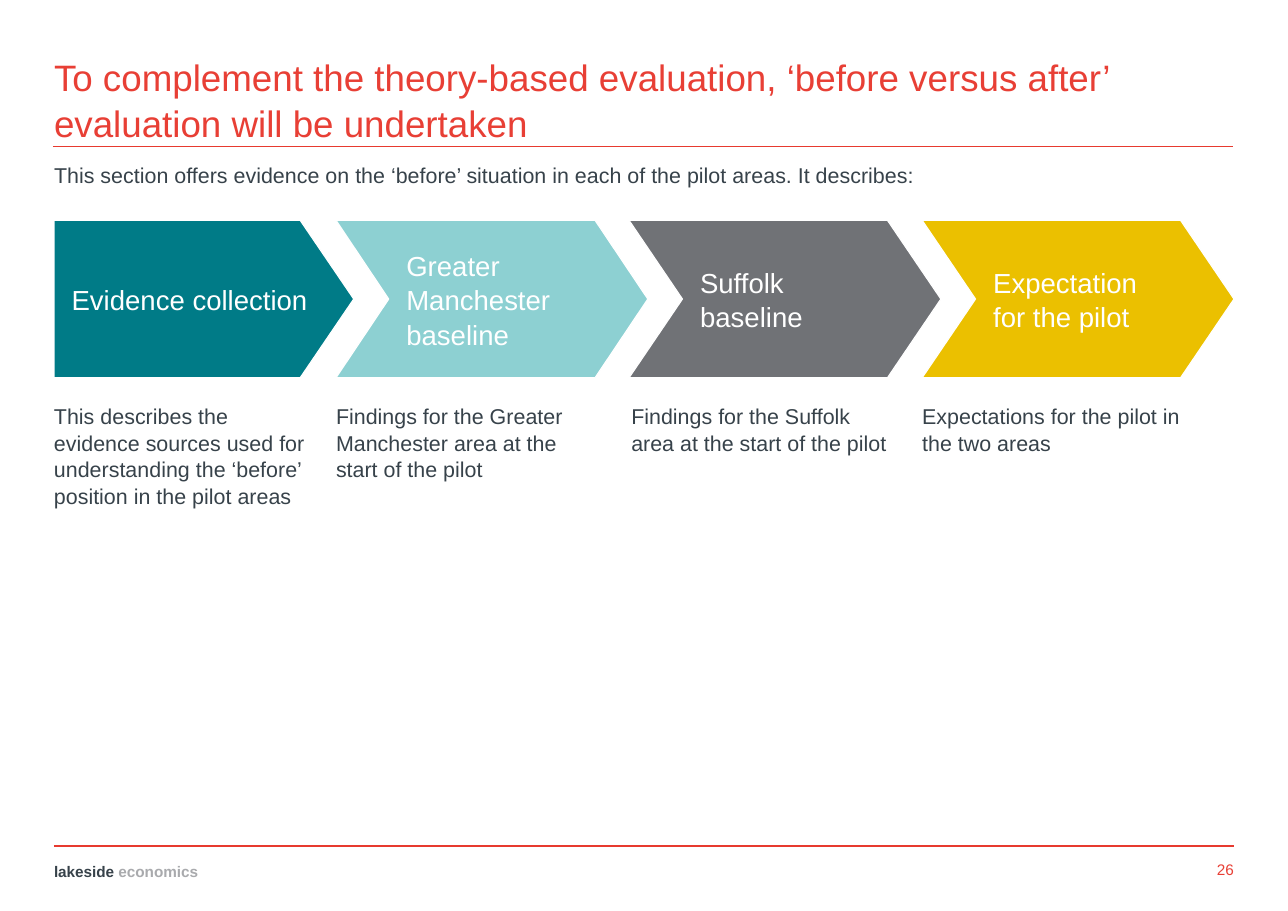
import pptx
import pptx.util
import pptx.dml.color
import pptx.enum.shapes
import pptx.enum.text
import pptx.oxml.ns
import lxml.etree

Inches = pptx.util.Inches
Pt = pptx.util.Pt
SHAPE = pptx.enum.shapes.MSO_SHAPE
ANCHOR = pptx.enum.text.MSO_ANCHOR
ALIGN = pptx.enum.text.PP_ALIGN

COLOURS = {
    "rule": "E73A2F", "red": "E83F35", "ink": "37424A", "pale": "A9AAAD",
    "white": "FFFFFF", "teal": "007B87", "aqua": "8DD0D2",
    "grey": "707276", "yellow": "EBC000",
}
LEFT = 0.49


def rgb(name):
    return pptx.dml.color.RGBColor.from_string(COLOURS[name])


def write(frame, runs, size, anchor=ANCHOR.TOP, align=ALIGN.LEFT, gap=2,
          insets=(0, 0, 0, 0), wrap=True):
    """Fill a text frame with one paragraph of (text, colour, bold) runs."""
    frame_format = dict(zip(
        ("margin_left", "margin_top", "margin_right", "margin_bottom"),
        map(Inches, insets)))
    frame_format.update(word_wrap=wrap, vertical_anchor=anchor)
    for name, value in frame_format.items():
        setattr(frame, name, value)
    paragraph = frame.paragraphs[0]
    paragraph_format = {"alignment": align, "line_spacing": 1.04,
                        "space_before": Pt(gap), "space_after": Pt(gap)}
    for name, value in paragraph_format.items():
        setattr(paragraph, name, value)
    for text, colour, bold in runs:
        run = paragraph.add_run()
        run.text = text
        run.font.color.rgb = rgb(colour)
        for name, value in {"name": "Arial", "size": Pt(size), "bold": bold}.items():
            setattr(run.font, name, value)


deck = pptx.Presentation()
deck.slide_width, deck.slide_height = Inches(11.69), Inches(8.27)
slide = deck.slides.add_slide(deck.slide_layouts[5])
shapes = slide.shapes

# Rules under the title and above the footer
for x, y in ((0.48, 1.33), (LEFT, 7.68)):
    rule = shapes.add_connector(pptx.enum.shapes.MSO_CONNECTOR.STRAIGHT,
                                Inches(x), Inches(y), Inches(x + 10.71), Inches(y))
    rule.line.color.rgb = rgb("rule")
    rule.line.width = Pt(1)
    lxml.etree.SubElement(rule.element.spPr, pptx.oxml.ns.qn("a:effectLst"))

# Title
title = shapes.title
title_place = {"left": LEFT, "top": 0.47, "width": 10.7, "height": 0.85}
for name, value in title_place.items():
    setattr(title, name, Inches(value))
write(title.text_frame,
      [("To complement the theory-based evaluation, ‘before versus after’ "
        "evaluation will be undertaken", "red", False)],
      24, anchor=ANCHOR.MIDDLE, gap=0)

# Introduction
intro = shapes.add_textbox(Inches(LEFT), Inches(1.46), Inches(8.62), Inches(0.24))
write(intro.text_frame,
      [("This section offers evidence on the ‘before’ situation in each of the "
        "pilot areas. It describes:", "ink", False)], 14)

# Steps: arrow left and width, preset, point depth, colour, heading,
# finding left, finding
steps = [
    (LEFT, 2.72, SHAPE.PENTAGON, 0.34, "teal", "Evidence collection", LEFT,
     "This describes the evidence sources used for understanding the ‘before’ "
     "position in the pilot areas"),
    (3.05, 2.83, SHAPE.CHEVRON, 0.335, "aqua", "Greater Manchester baseline", 3.05,
     "Findings for the Greater Manchester area at the start of the pilot"),
    (5.71, 2.83, SHAPE.CHEVRON, 0.339, "grey", "Suffolk baseline", 5.73,
     "Findings for the Suffolk area at the start of the pilot"),
    (8.37, 2.83, SHAPE.CHEVRON, 0.339, "yellow", "Expectation for the pilot", 8.37,
     "Expectations for the pilot in the two areas"),
]
for x, width, preset, depth, colour, heading, finding_x, finding in steps:
    step = shapes.add_shape(preset, Inches(x), Inches(2), Inches(width), Inches(1.43))
    step.adjustments[0] = depth
    step.shadow.inherit = False
    step.fill.solid()
    step.fill.fore_color.rgb = rgb(colour)
    step.line.color.rgb = rgb("white")
    step.line.width = Pt(0.75)
    write(step.text_frame, [(heading, "white", False)], 18, anchor=ANCHOR.MIDDLE,
          gap=0, insets=(0.16, 0.04, 0.04, 0.04))
    description = shapes.add_textbox(Inches(finding_x), Inches(3.65),
                                     Inches(2.4), Inches(0.94))
    write(description.text_frame, [(finding, "ink", False)], 14)

# Footer: firm name and page number
firm = shapes.add_textbox(Inches(LEFT), Inches(7.79), Inches(1.38), Inches(0.2))
write(firm.text_frame, [("lakeside ", "ink", True), ("economics", "pale", True)],
      10, anchor=ANCHOR.BOTTOM, wrap=False)
page = shapes.add_textbox(Inches(10.9), Inches(7.78), Inches(0.3), Inches(0.2))
write(page.text_frame, [("26", "red", False)], 10, anchor=ANCHOR.BOTTOM,
      align=ALIGN.RIGHT, wrap=False)

deck.save("out.pptx")
